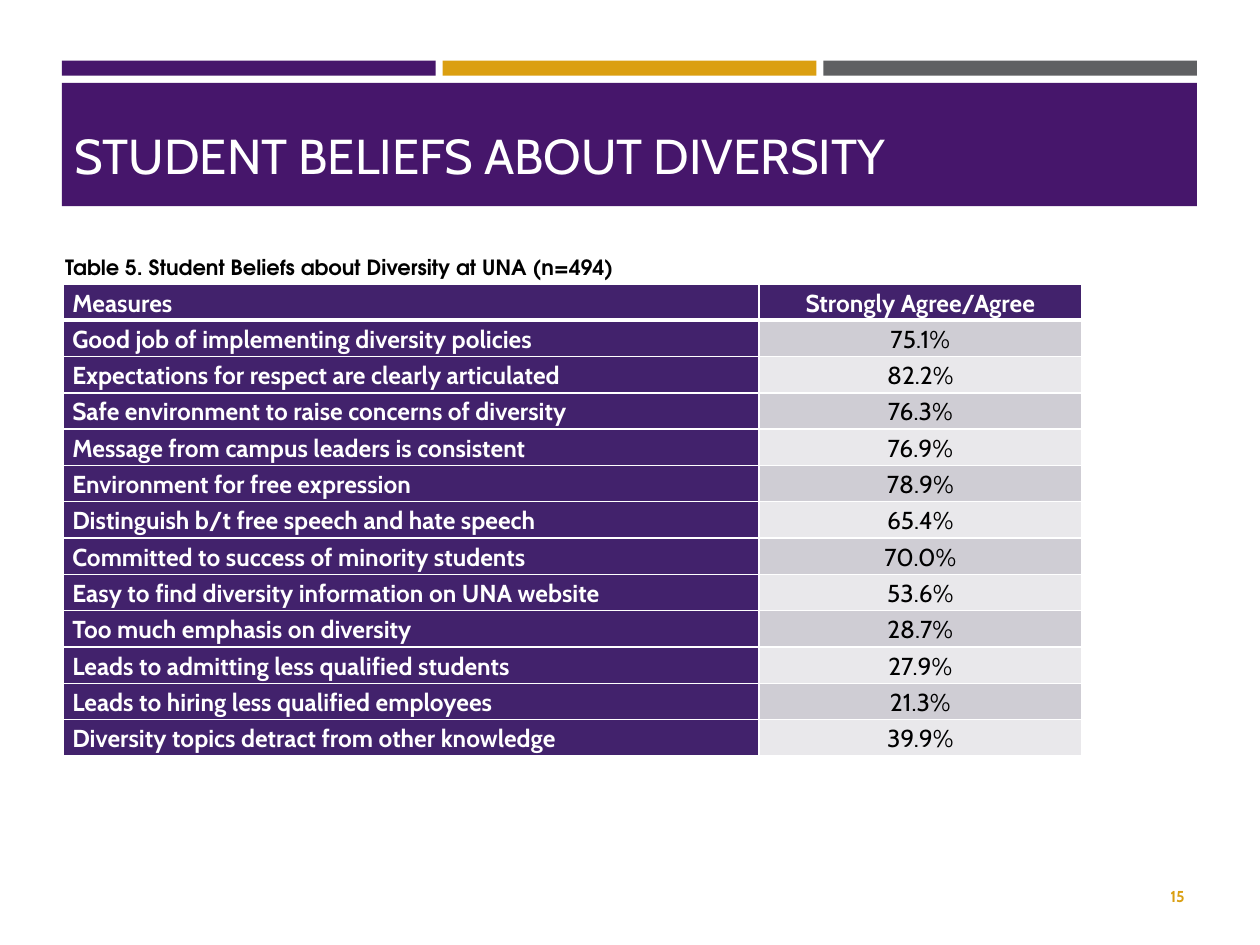
from lxml.etree import SubElement
from pptx import Presentation
from pptx.dml.color import RGBColor
from pptx.enum.shapes import MSO_SHAPE as Shape
from pptx.enum.text import MSO_ANCHOR as Anchor, PP_ALIGN as Align
from pptx.oxml.ns import qn
from pptx.util import Pt

PURPLE = RGBColor(0x46, 0x16, 0x6B)
GOLD = RGBColor(0xDB, 0x9F, 0x11)
NUMBER_GOLD = RGBColor(0xDA, 0x9F, 0x11)
GRAY = RGBColor(0x5F, 0x60, 0x62)
TABLE_PURPLE = RGBColor(0x42, 0x22, 0x6C)
BANDS = RGBColor(0xCF, 0xCD, 0xD4), RGBColor(0xE9, 0xE8, 0xEB)
WHITE = RGBColor(0xFF, 0xFF, 0xFF)
BLACK = RGBColor(0x00, 0x00, 0x00)

FONT = "Cabin"
CAPTION_FONT = "TeX Gyre Adventor"

TITLE = "STUDENT BELIEFS ABOUT DIVERSITY"
CAPTION = "Table 5. Student Beliefs about Diversity at UNA (n=494)"
PAGE_NUMBER = "15"
ROWS = [
    ("Measures", "Strongly Agree/Agree"),
    ("Good job of implementing diversity policies", "75.1%"),
    ("Expectations for respect are clearly articulated", "82.2%"),
    ("Safe environment to raise concerns of diversity", "76.3%"),
    ("Message from campus leaders is consistent", "76.9%"),
    ("Environment for free expression", "78.9%"),
    ("Distinguish b/t free speech and hate speech", "65.4%"),
    ("Committed to success of minority students", "70.0%"),
    ("Easy to find diversity information on UNA website", "53.6%"),
    ("Too much emphasis on diversity", "28.7%"),
    ("Leads to admitting less qualified students", "27.9%"),
    ("Leads to hiring less qualified employees", "21.3%"),
    ("Diversity topics detract from other knowledge", "39.9%"),
]

LEFT, WIDTH = 35.4, 648.6
STRIPE_GAP = 4
STRIPE_COLORS = [PURPLE, GOLD, GRAY]
COLUMN_WIDTHS = [397.4, 184.4]
ROW_HEIGHT = 20.77


def add_bar(page, left, top, width, height, color):
    bar = page.shapes.add_shape(
        Shape.RECTANGLE, Pt(left), Pt(top), Pt(width), Pt(height))
    bar.shadow.inherit = False
    bar.fill.solid()
    bar.fill.fore_color.rgb = color
    bar.line.fill.background()


def write(frame, text, size, color, bold=False, font=FONT, align=Align.LEFT):
    para = frame.paragraphs[0]
    para.alignment = align
    span = para.add_run()
    span.text = text
    span.font.name = font
    span.font.size = Pt(size)
    span.font.bold = bold
    span.font.color.rgb = color
    return para


def add_text(page, place, text, size, color, anchor, wrap=True, **style):
    box = page.shapes.add_textbox(*map(Pt, place))
    frame = box.text_frame
    frame.word_wrap = wrap
    frame.vertical_anchor = anchor
    write(frame, text, size, color, **style)


def set_borders(cell, is_header, under_header):
    properties = cell._tc.get_or_add_tcPr()
    widths = {"L": 1, "R": 1, "T": 3 if under_header else 1, "B": 3 if is_header else 1}
    for index, (side, width) in enumerate(widths.items()):
        line = SubElement(properties, qn(f"a:ln{side}"), w=str(Pt(width)))
        fill = SubElement(line, qn("a:solidFill"))
        SubElement(fill, qn("a:srgbClr"), val=str(WHITE))
        properties.remove(line)
        properties.insert(index, line)


def add_beliefs_table(page):
    table = page.shapes.add_table(
        len(ROWS), len(COLUMN_WIDTHS), Pt(36.3), Pt(162.2),
        Pt(sum(COLUMN_WIDTHS)), Pt(ROW_HEIGHT * len(ROWS))).table
    for column, width in zip(table.columns, COLUMN_WIDTHS):
        column.width = Pt(width)
    for r, texts in enumerate(ROWS):
        table.rows[r].height = Pt(ROW_HEIGHT)
        for c, text in enumerate(texts):
            cell = table.cell(r, c)
            is_heading = r == 0 or c == 0
            cell.margin_left = cell.margin_right = Pt(5)
            cell.margin_top = cell.margin_bottom = 0
            cell.fill.solid()
            cell.fill.fore_color.rgb = TABLE_PURPLE if is_heading else BANDS[(r - 1) % 2]
            para = write(cell.text_frame, text, 14, WHITE if is_heading else BLACK,
                         bold=is_heading, align=Align.CENTER if c else Align.LEFT)
            para.line_spacing = 1.15
            set_borders(cell, r == 0, r == 1)


def main():
    deck = Presentation()
    deck.slide_width, deck.slide_height = Pt(720), Pt(540)
    page = deck.slides.add_slide(deck.slide_layouts[6])

    count = len(STRIPE_COLORS)
    stripe = (WIDTH - STRIPE_GAP * (count - 1)) / count
    for i, color in enumerate(STRIPE_COLORS):
        add_bar(page, LEFT + i * (stripe + STRIPE_GAP), 34.7, stripe, 8.5, color)
    add_bar(page, LEFT, 47.3, WIDTH, 70.5, PURPLE)

    add_text(page, (LEFT, 54, WIDTH, 54.7), TITLE, 28, WHITE, Anchor.BOTTOM)
    add_text(page, (614.2, 497.5, 69.8, 28.8), PAGE_NUMBER, 9, NUMBER_GOLD,
             Anchor.MIDDLE, bold=True, align=Align.RIGHT)
    add_beliefs_table(page)
    add_text(page, (30.2, 141.8, 329, 36), CAPTION, 12, BLACK, Anchor.TOP,
             wrap=False, bold=True, font=CAPTION_FONT)
    deck.save("out.pptx")


if __name__ == "__main__":
    main()
